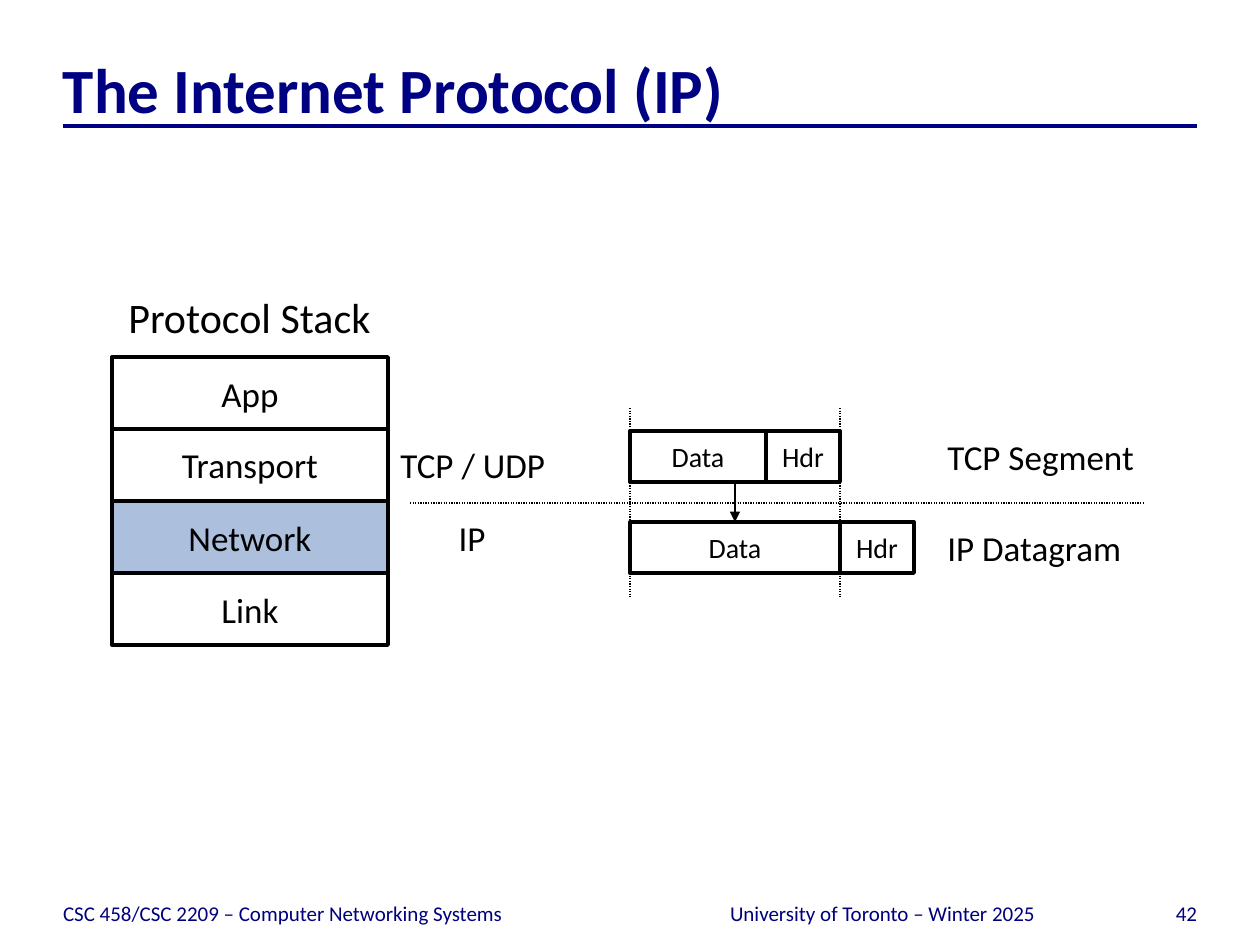
from lxml import etree
from pptx import Presentation
from pptx import util as u
from pptx.dml.color import RGBColor
from pptx.enum import dml, shapes, text
from pptx.oxml.ns import qn

EMU_PER_PX = 914400 / 126
NAVY, FOOTER, BLACK, HIGHLIGHT = "000082", "00007C", "000000", "ACC0DE"
LEFT, CENTER, RIGHT = text.PP_ALIGN.LEFT, text.PP_ALIGN.CENTER, text.PP_ALIGN.RIGHT
MIDDLE, BOTTOM = text.MSO_ANCHOR.MIDDLE, text.MSO_ANCHOR.BOTTOM


def px(*lengths):
    return [u.Emu(round(n * EMU_PER_PX)) for n in lengths]


def rgb(color):
    return RGBColor.from_string(color)


class Diagram:
    """Draws elements on one slide in a shared style."""
    font = "Calibri"
    thick, thin = 2.25, 0.75

    def __init__(self, slide):
        self.slide = slide

    def set_text(self, sp, words, size, color=BLACK, align=LEFT, anchor=MIDDLE, bold=False):
        tf = sp.text_frame
        tf.text = words
        tf.word_wrap = True
        tf.vertical_anchor = anchor
        p = tf.paragraphs[0]
        p.alignment = align
        font = p.runs[0].font
        font.name, font.size, font.bold = self.font, u.Pt(size), bold
        font.color.rgb = rgb(color)

    def label(self, words, box, size=20, flush=False, **style):
        """Add plain text; flush text has no insets."""
        sp = self.slide.shapes.add_textbox(*px(*box))
        if flush:
            tf = sp.text_frame
            tf.margin_left = tf.margin_right = tf.margin_top = tf.margin_bottom = 0
        self.set_text(sp, words, size, **style)

    def box(self, words, box, size, fill=None):
        sp = self.slide.shapes.add_shape(shapes.MSO_SHAPE.RECTANGLE, *px(*box))
        sp.shadow.inherit = False
        if fill:
            sp.fill.solid()
            sp.fill.fore_color.rgb = rgb(fill)
        else:
            sp.fill.background()
        sp.line.color.rgb = rgb(BLACK)
        sp.line.width = u.Pt(self.thick)
        self.set_text(sp, words, size, align=CENTER)

    def line(self, start, end, color=BLACK, width=thin, dotted=False, arrow=False):
        cn = self.slide.shapes.add_connector(
            shapes.MSO_CONNECTOR.STRAIGHT, *px(*start, *end))
        cn.line.color.rgb = rgb(color)
        cn.line.width = u.Pt(width)
        if dotted:
            cn.line.dash_style = dml.MSO_LINE.ROUND_DOT
        props = cn._element.spPr
        if arrow:
            etree.SubElement(props.find(qn("a:ln")), qn("a:tailEnd"), type="triangle")
        etree.SubElement(props, qn("a:effectLst"))


def draw_frame(d):
    d.line((63, 126), (1197, 126), NAVY, d.thick)
    d.label("The Internet Protocol (IP)", (63, 42, 1134, 84), 36, flush=True,
            color=NAVY, anchor=BOTTOM, bold=True)
    for words, left, width, align in (
            ("CSC 458/CSC 2209 – Computer Networking Systems", 63, 609, LEFT),
            ("University of Toronto – Winter 2025", 683, 399, CENTER),
            ("42", 1092, 105, RIGHT)):
        d.label(words, (left, 876, width, 50), 12, flush=True,
                color=FOOTER, align=align, anchor=BOTTOM)


def draw_stack(d):
    left, top, width, height = 112, 357, 276, 72
    d.label("Protocol Stack", (116, 292, 325, 50), 24)
    for i, layer in enumerate(("App", "Transport", "Network", "Link")):
        d.box(layer, (left, top + i * height, width, height), 20,
              HIGHLIGHT if layer == "Network" else None)
    d.label("TCP / UDP", (left + width, top + height, 210, height))
    d.label("IP", (left + width, top + 2 * height, 168, height), align=CENTER)


def draw_packets(d):
    left, right, hdr, height = 630, 840, 74, 51
    segment_top, datagram_top = 431, 522
    middle = (left + right) // 2
    d.line((410, 503), (1144, 503), dotted=True)
    for name, top, split in (("TCP Segment", segment_top, right - hdr),
                             ("IP Datagram", datagram_top, right)):
        d.box("Data", (left, top, split - left, height), 16)
        d.box("Hdr", (split, top, hdr, height), 16)
        d.label(name, (935, top, 294, height))
    d.line((middle, segment_top + height), (middle, datagram_top), arrow=True)
    for x in (left, right):
        d.line((x, 408), (x, 597), dotted=True)


def main():
    prs = Presentation()
    prs.slide_width, prs.slide_height = px(1260, 945)
    d = Diagram(prs.slides.add_slide(prs.slide_layouts[6]))
    draw_frame(d)
    draw_stack(d)
    draw_packets(d)
    prs.save("out.pptx")


if __name__ == "__main__":
    main()
